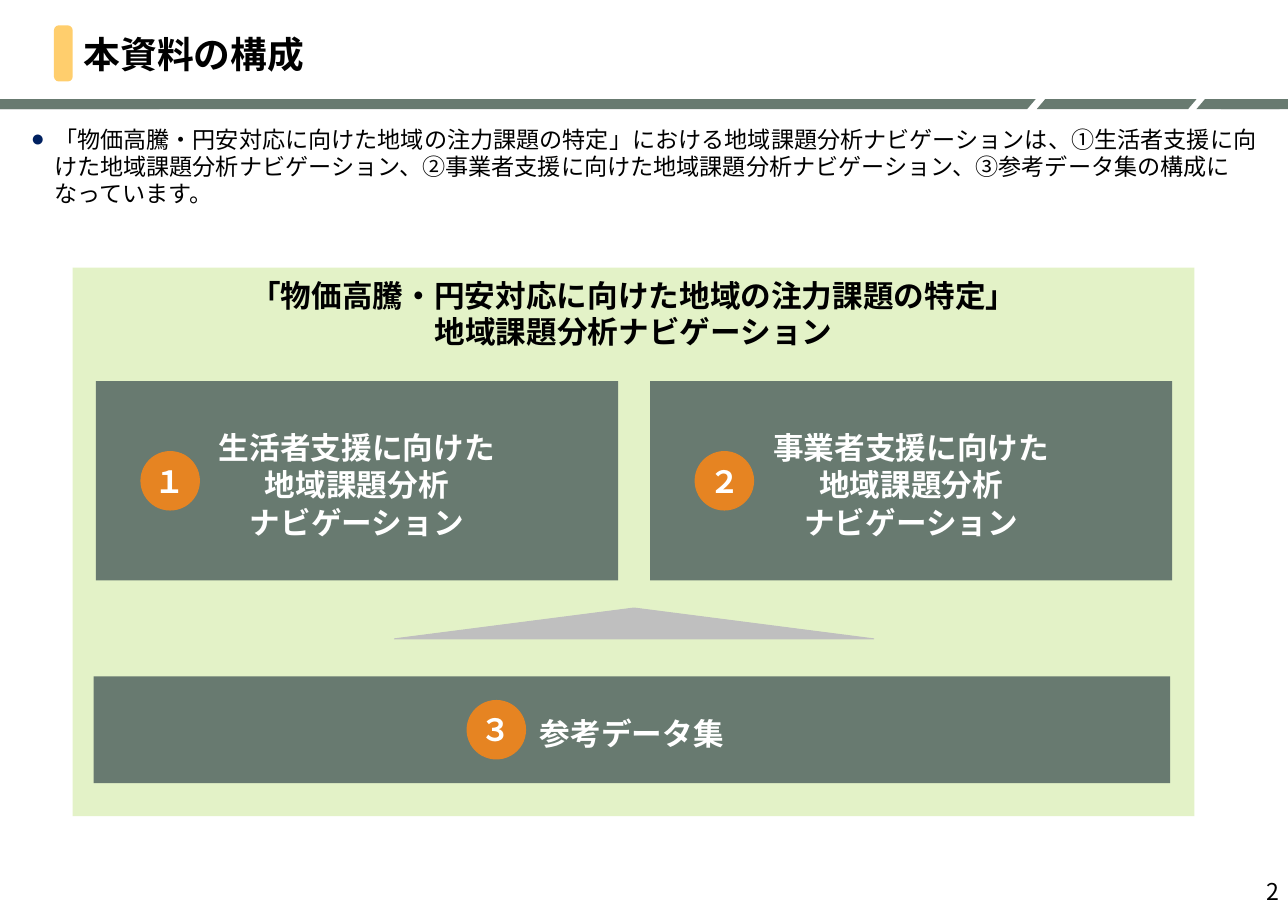
from lxml import etree
from pptx import Presentation
from pptx import util as u
from pptx.dml.color import RGBColor
from pptx.enum import lang, shapes, text
from pptx.oxml import ns

PX = 9144
GOTHIC = "Noto Sans CJK JP"
BLACK = RGBColor(0x00, 0x00, 0x00)
WHITE = RGBColor(0xFF, 0xFF, 0xFF)
NAVY = RGBColor(0x00, 0x20, 0x60)
SLATE = RGBColor(0x68, 0x7A, 0x70)
YELLOW = RGBColor(0xFF, 0xCE, 0x6D)
LIME = RGBColor(0xE3, 0xF2, 0xC7)
GRAY = RGBColor(0xBF, 0xBF, 0xBF)
ORANGE = RGBColor(0xE6, 0x84, 0x22)

KIND = shapes.MSO_SHAPE
ANCHOR = text.MSO_ANCHOR
ALIGN = text.PP_ALIGN
HEADING = {"size": u.Pt(20), "bold": True}
BODY = {"size": u.Pt(15.1), "bold": False}
TITLE = {"size": u.Pt(24), "bold": True}


def px(*lengths):
    return [u.Emu(length * PX) for length in lengths]


def apply(target, values):
    for name, value in values.items():
        setattr(target, name, value)


def place(shape, box):
    apply(shape, dict(zip(("left", "top", "width", "height"), px(*box))))


def write(shape, lines, font, color, align=ALIGN.CENTER, anchor=ANCHOR.MIDDLE,
          insets=(10, 5, 10, 5), spacing=None, typeface=GOTHIC):
    frame = shape.text_frame
    sides = ("margin_left", "margin_top", "margin_right", "margin_bottom")
    apply(frame, {"word_wrap": True, "auto_size": text.MSO_AUTO_SIZE.NONE,
                  "vertical_anchor": anchor, **dict(zip(sides, px(*insets)))})
    frame.text = "\n".join(lines)
    for paragraph in frame.paragraphs:
        apply(paragraph, {"alignment": align, "line_spacing": spacing,
                          "space_before": u.Pt(0)})
        run = paragraph.runs[0]
        apply(run.font, {**font, "name": typeface,
                         "language_id": lang.MSO_LANGUAGE_ID.JAPANESE})
        run.font.color.rgb = color
        east_asian = etree.SubElement(run.font._element, ns.qn("a:ea"))
        east_asian.set("typeface", typeface)


def add_bullet(paragraph, symbol, color, indent):
    properties = paragraph._p.get_or_add_pPr()
    properties.set("marL", str(indent * PX))
    properties.set("indent", str(-indent * PX))
    bullet_color = etree.SubElement(properties, ns.qn("a:buClr"))
    etree.SubElement(bullet_color, ns.qn("a:srgbClr")).set("val", str(color))
    etree.SubElement(properties, ns.qn("a:buChar")).set("char", symbol)


def add_block(slide, kind, box, fill, adjustment=None, outlined=False):
    shape = slide.shapes.add_shape(kind, *px(*box))
    shape.shadow.inherit = False
    shape.fill.solid()
    shape.fill.fore_color.rgb = fill
    if outlined:
        shape.line.color.rgb = fill
        shape.line.width = u.Pt(0.75)
    else:
        shape.line.fill.background()
    if adjustment is not None:
        shape.adjustments[0] = adjustment
    return shape


def add_section(slide, box, lines):
    block = add_block(slide, KIND.RECTANGLE, box, SLATE)
    write(block, lines, HEADING, WHITE, insets=(10, 11, 10, 5),
          spacing=u.Pt(24.4))


def add_badge(slide, left, top, digit):
    badge = add_block(slide, KIND.OVAL, (left, top, 53, 53), ORANGE, outlined=True)
    write(badge, [digit], HEADING, WHITE, insets=(4, 4, 4, 4), typeface="Calibri")


def add_header(slide):
    for left, width in ((0, 940), (941, 145), (1086, 83)):
        add_block(slide, KIND.PARALLELOGRAM, (left, 90, width, 9), SLATE, 0.85)
    for left, width in ((0, 145), (1108, 61)):
        add_block(slide, KIND.RECTANGLE, (left, 90, width, 9), SLATE)
    add_block(slide, KIND.ROUNDED_RECTANGLE, (49, 23, 17, 51), YELLOW, 0.26)
    place(slide.shapes.title, (66, 23, 1075, 51))
    write(slide.shapes.title, ["本資料の構成"], TITLE, BLACK, ALIGN.LEFT)


def add_summary(slide):
    summary = slide.placeholders[1]
    place(summary, (24, 108, 1122, 80))
    write(summary, ["「物価高騰・円安対応に向けた地域の注力課題の特定」における地域課題分析"
                    "ナビゲーションは、①生活者支援に向けた地域課題分析ナビゲーション、"
                    "②事業者支援に向けた地域課題分析ナビゲーション、"
                    "③参考データ集の構成になっています。"],
          BODY, BLACK, ALIGN.LEFT, ANCHOR.TOP, (4, 6, 4, 4), u.Pt(17.8))
    add_bullet(summary.text_frame.paragraphs[0], "●", NAVY, 21)


def add_structure(slide):
    panel = add_block(slide, KIND.RECTANGLE, (66, 243, 1018, 498), LIME)
    write(panel, ["「物価高騰・円安対応に向けた地域の注力課題の特定」",
                  "地域課題分析ナビゲーション"],
          HEADING, BLACK, anchor=ANCHOR.TOP, insets=(10, 8, 10, 5),
          spacing=u.Pt(24))
    add_section(slide, (85, 614, 977, 97), ["参考データ集"])
    add_badge(slide, 424, 636, "３")
    add_block(slide, KIND.ISOSCELES_TRIANGLE, (358, 552, 435, 28), GRAY,
              outlined=True)
    for column, (digit, audience) in enumerate((("１", "生活者"), ("２", "事業者"))):
        left = 87 + column * 503
        add_section(slide, (left, 346, 474, 181),
                    [f"{audience}支援に向けた", "地域課題分析", "ナビゲーション"])
        add_badge(slide, left + 41, 410, digit)


def add_page_number(slide):
    number = slide.shapes.add_textbox(*px(896, 787, 273, 40))
    write(number, ["2"], BODY, BLACK, ALIGN.RIGHT, insets=(10, 5, 8, 0))


def main():
    presentation = Presentation()
    apply(presentation, dict(zip(("slide_width", "slide_height"), px(1169, 827))))
    slide = presentation.slides.add_slide(presentation.slide_layouts[1])
    add_header(slide)
    add_summary(slide)
    add_structure(slide)
    add_page_number(slide)
    presentation.save("out.pptx")


if __name__ == "__main__":
    main()
